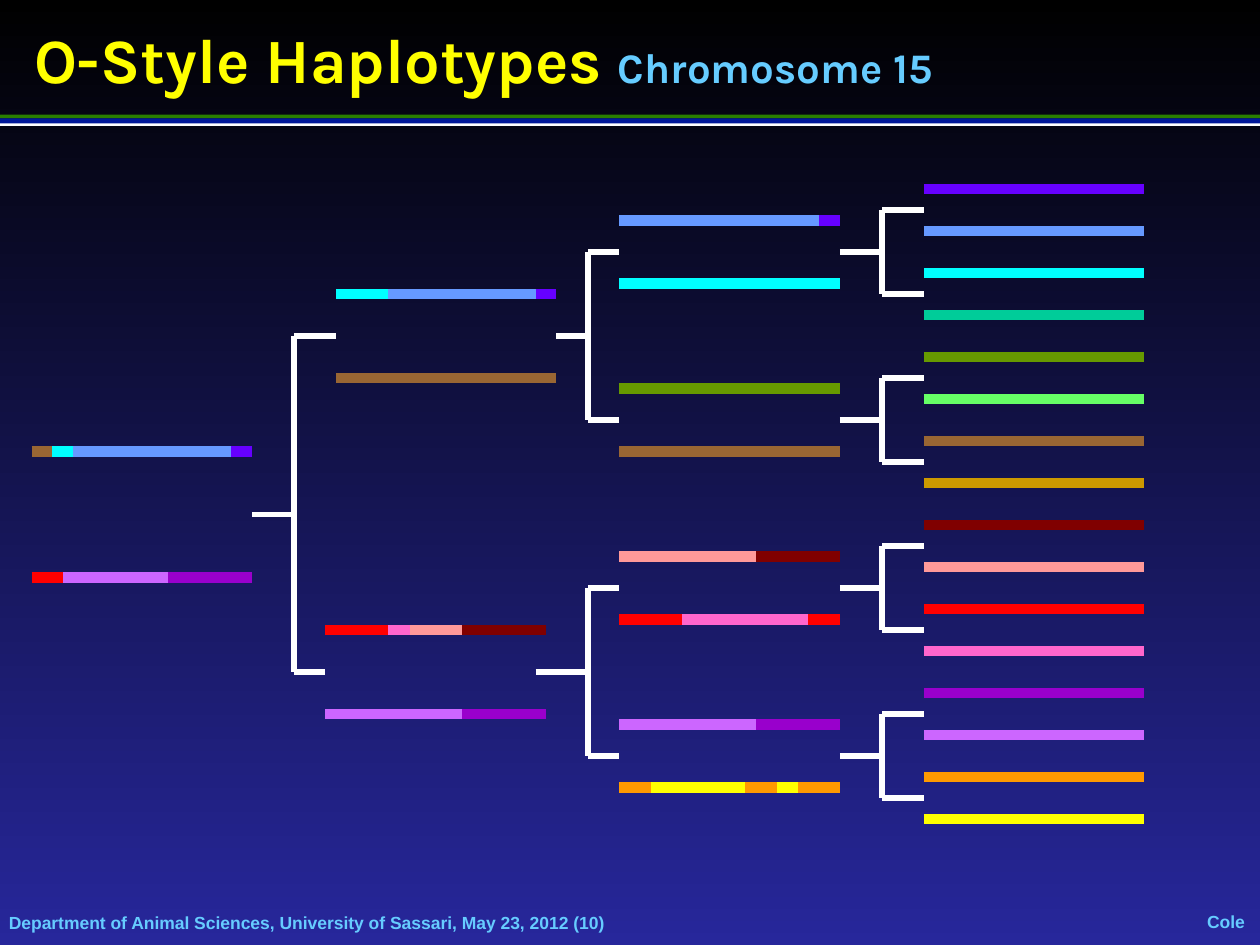
from dataclasses import dataclass
from typing import NamedTuple

from lxml import etree
from pptx import Presentation
from pptx.dml.color import RGBColor
from pptx.enum import shapes, text
from pptx.oxml.ns import qn
from pptx.util import Inches, Pt

BAR_LENGTH = 21


@dataclass(frozen=True)
class Theme:
    title: str = "FFFF00"
    accent: str = "66CCFF"
    tree: str = "FFFFFF"
    bg_top: str = "000000"
    bg_bottom: str = "27279B"
    rule_green: str = "2A7E00"
    rule_blue: str = "001799"
    indigo: str = "6600FF"
    blue: str = "6699FF"
    cyan: str = "00FFFF"
    teal: str = "00CC99"
    olive: str = "669900"
    lime: str = "66FF66"
    brown: str = "996633"
    gold: str = "CC9900"
    maroon: str = "800000"
    salmon: str = "FF9999"
    red: str = "FF0000"
    pink: str = "FF66CC"
    violet: str = "9900CC"
    lilac: str = "CC66FF"
    orange: str = "FF9900"
    yellow: str = "FFFF00"
    title_font: str = "Karla"
    footer_font: str = "Arial"
    title_size: int = 36
    subtitle_size: int = 24
    footer_size: int = 10
    tree_width: int = 3
    bar_width: int = 6


T = Theme()


class Segment(NamedTuple):
    color: str
    length: int = BAR_LENGTH


class Haplotype(NamedTuple):
    left: int
    top: int
    segments: list[Segment]


class Bracket(NamedTuple):
    stem: int
    spine: int
    upper_end: int
    lower_end: int
    top: int
    bottom: int
    middle: int


class Rule(NamedTuple):
    top: float
    height: float
    color: str


class Footer(NamedTuple):
    text: str
    left: float
    top: float
    width: float
    align: text.PP_ALIGN
    wrap: bool


FOUNDERS = [T.indigo, T.blue, T.cyan, T.teal, T.olive, T.lime, T.brown, T.gold,
            T.maroon, T.salmon, T.red, T.pink, T.violet, T.lilac, T.orange, T.yellow]

LILAC_VIOLET = [Segment(T.lilac, 13), Segment(T.violet, 8)]

HAPLOTYPES = [
    Haplotype(3, 43, [Segment(T.brown, 2), Segment(T.cyan, 2),
                      Segment(T.blue, 15), Segment(T.indigo, 2)]),
    Haplotype(3, 55, [Segment(T.red, 3), Segment(T.lilac, 10), Segment(T.violet, 8)]),
    Haplotype(32, 28, [Segment(T.cyan, 5), Segment(T.blue, 14), Segment(T.indigo, 2)]),
    Haplotype(32, 36, [Segment(T.brown)]),
    Haplotype(31, 60, [Segment(T.red, 6), Segment(T.pink, 2),
                       Segment(T.salmon, 5), Segment(T.maroon, 8)]),
    Haplotype(31, 68, LILAC_VIOLET),
    Haplotype(59, 21, [Segment(T.blue, 19), Segment(T.indigo, 2)]),
    Haplotype(59, 27, [Segment(T.cyan)]),
    Haplotype(59, 37, [Segment(T.olive)]),
    Haplotype(59, 43, [Segment(T.brown)]),
    Haplotype(59, 53, [Segment(T.salmon, 13), Segment(T.maroon, 8)]),
    Haplotype(59, 59, [Segment(T.red, 6), Segment(T.pink, 12), Segment(T.red, 3)]),
    Haplotype(59, 69, LILAC_VIOLET),
    Haplotype(59, 75, [Segment(T.orange, 3), Segment(T.yellow, 9), Segment(T.orange, 3),
                       Segment(T.yellow, 2), Segment(T.orange, 4)]),
    *(Haplotype(88, 18 + 4 * i, [Segment(c)]) for i, c in enumerate(FOUNDERS)),
]

BRACKETS = [
    Bracket(24, 28, 32, 31, 32, 64, 49),
    Bracket(53, 56, 59, 59, 24, 40, 32),
    Bracket(51, 56, 59, 59, 56, 72, 64),
    *(Bracket(80, 84, 88, 88, y - 4, y + 4, y) for y in range(24, 73, 16)),
]

RULES = [Rule(0.91, 0.03, T.rule_green), Rule(0.97, 0.03, T.tree),
         Rule(0.94, 0.04, T.rule_blue)]

FOOTERS = [
    Footer("Department of Animal Sciences, University of Sassari, May 23, 2012 (10)",
           0.07, 7.24, 8.09, text.PP_ALIGN.LEFT, True),
    Footer("Cole", 9.58, 7.23, 0.3, text.PP_ALIGN.CENTER, False),
]


def rgb(color: str) -> RGBColor:
    return RGBColor.from_string(color)


def twelfths(n: int) -> int:
    return Inches(n / 12)


def style_run(r, font: str, size: int, color: str) -> None:
    r.font.name = font
    r.font.size = Pt(size)
    r.font.bold = True
    r.font.color.rgb = rgb(color)


def draw_line(slide, x1: int, y1: int, x2: int, y2: int, color: str, width: int) -> None:
    cxn = slide.shapes.add_connector(shapes.MSO_CONNECTOR.STRAIGHT,
                                     *map(twelfths, (x1, y1, x2, y2)))
    cxn.line.color.rgb = rgb(color)
    cxn.line.width = Pt(width)
    etree.SubElement(cxn._element.spPr, qn("a:effectLst"))


def draw_haplotype(slide, hap: Haplotype) -> None:
    x = hap.left
    for seg in hap.segments:
        draw_line(slide, x, hap.top, x + seg.length, hap.top, seg.color, T.bar_width)
        x += seg.length


def draw_bracket(slide, b: Bracket) -> None:
    for ends in [(b.spine, b.top, b.upper_end, b.top),
                 (b.spine, b.bottom, b.lower_end, b.bottom),
                 (b.spine, b.top, b.spine, b.bottom),
                 (b.stem, b.middle, b.spine, b.middle)]:
        draw_line(slide, *ends, T.tree, T.tree_width)


def draw_rule(slide, rule: Rule) -> None:
    sp = slide.shapes.add_shape(shapes.MSO_SHAPE.RECTANGLE, 0, Inches(rule.top),
                                Inches(10), Inches(rule.height))
    sp.shadow.inherit = False
    sp.fill.solid()
    sp.fill.fore_color.rgb = rgb(rule.color)
    sp.line.fill.background()


def draw_footer(slide, footer: Footer) -> None:
    sp = slide.shapes.add_textbox(Inches(footer.left), Inches(footer.top),
                                  Inches(footer.width), Inches(0.17))
    tf = sp.text_frame
    tf.margin_left = tf.margin_right = tf.margin_top = tf.margin_bottom = 0
    tf.word_wrap = footer.wrap
    tf.vertical_anchor = text.MSO_ANCHOR.MIDDLE
    p = tf.paragraphs[0]
    p.text = footer.text
    p.alignment = footer.align
    style_run(p.runs[0], T.footer_font, T.footer_size, T.accent)


def draw_title(slide) -> None:
    sp = slide.shapes.title
    sp.left, sp.top, sp.width, sp.height = map(Inches, (0.17, 0.11, 9.66, 0.7))
    tf = sp.text_frame
    tf.auto_size = text.MSO_AUTO_SIZE.NONE
    tf.vertical_anchor = text.MSO_ANCHOR.MIDDLE
    p = tf.paragraphs[0]
    p.alignment = text.PP_ALIGN.LEFT
    for words, size, color in [("O-Style Haplotypes ", T.title_size, T.title),
                               ("Chromosome 15", T.subtitle_size, T.accent)]:
        r = p.add_run()
        r.text = words
        style_run(r, T.title_font, size, color)


def main() -> None:
    prs = Presentation()
    prs.slide_width, prs.slide_height = Inches(10), Inches(7.5)
    slide = prs.slides.add_slide(prs.slide_layouts[5])
    fill = slide.background.fill
    fill.gradient()
    fill.gradient_angle = 270
    for stop, color in zip(fill.gradient_stops, (T.bg_top, T.bg_bottom)):
        stop.color.rgb = rgb(color)
    for draw, items in [(draw_footer, FOOTERS), (draw_rule, RULES),
                        (draw_bracket, BRACKETS), (draw_haplotype, HAPLOTYPES)]:
        for item in items:
            draw(slide, item)
    draw_title(slide)
    prs.save("out.pptx")


if __name__ == "__main__":
    main()
